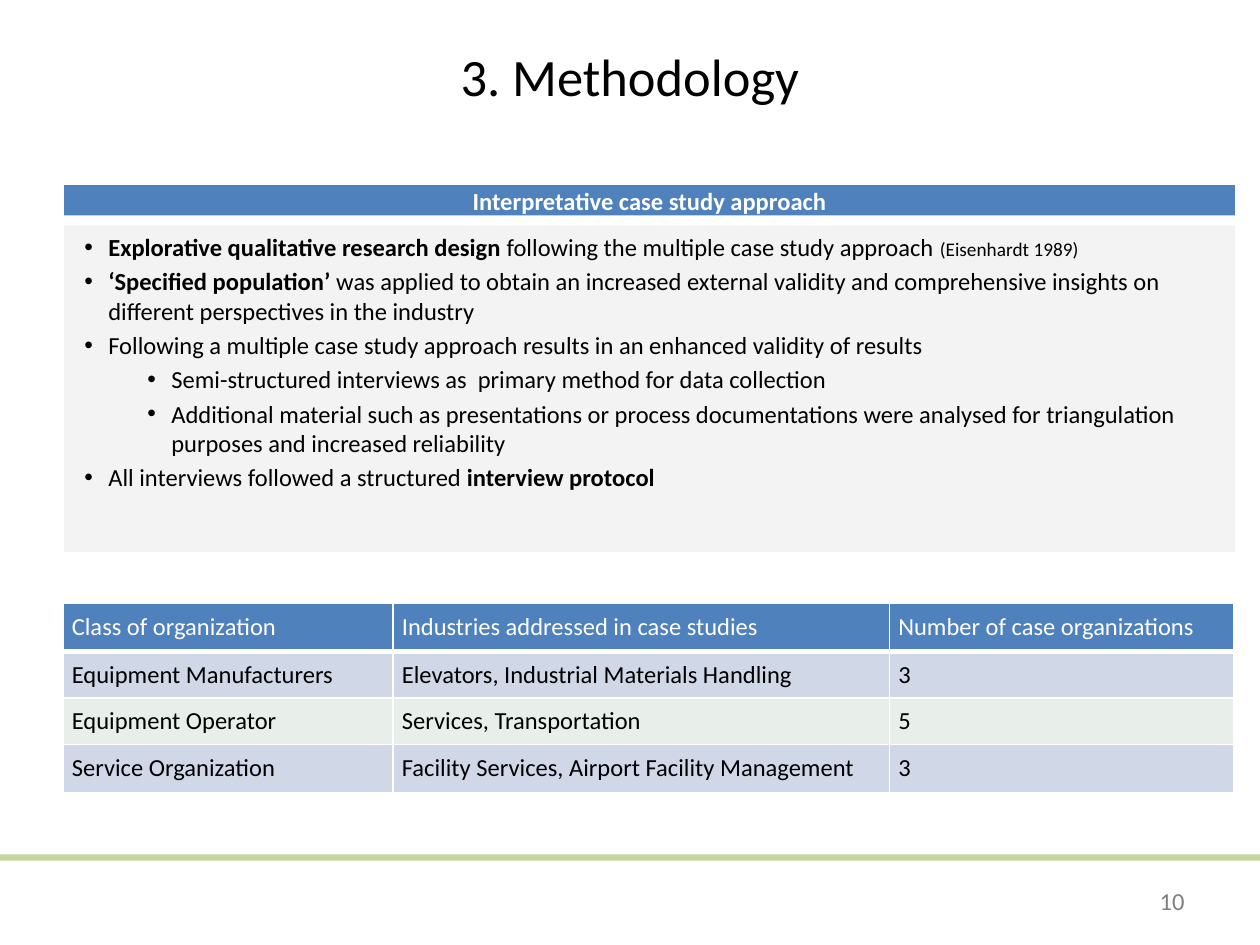
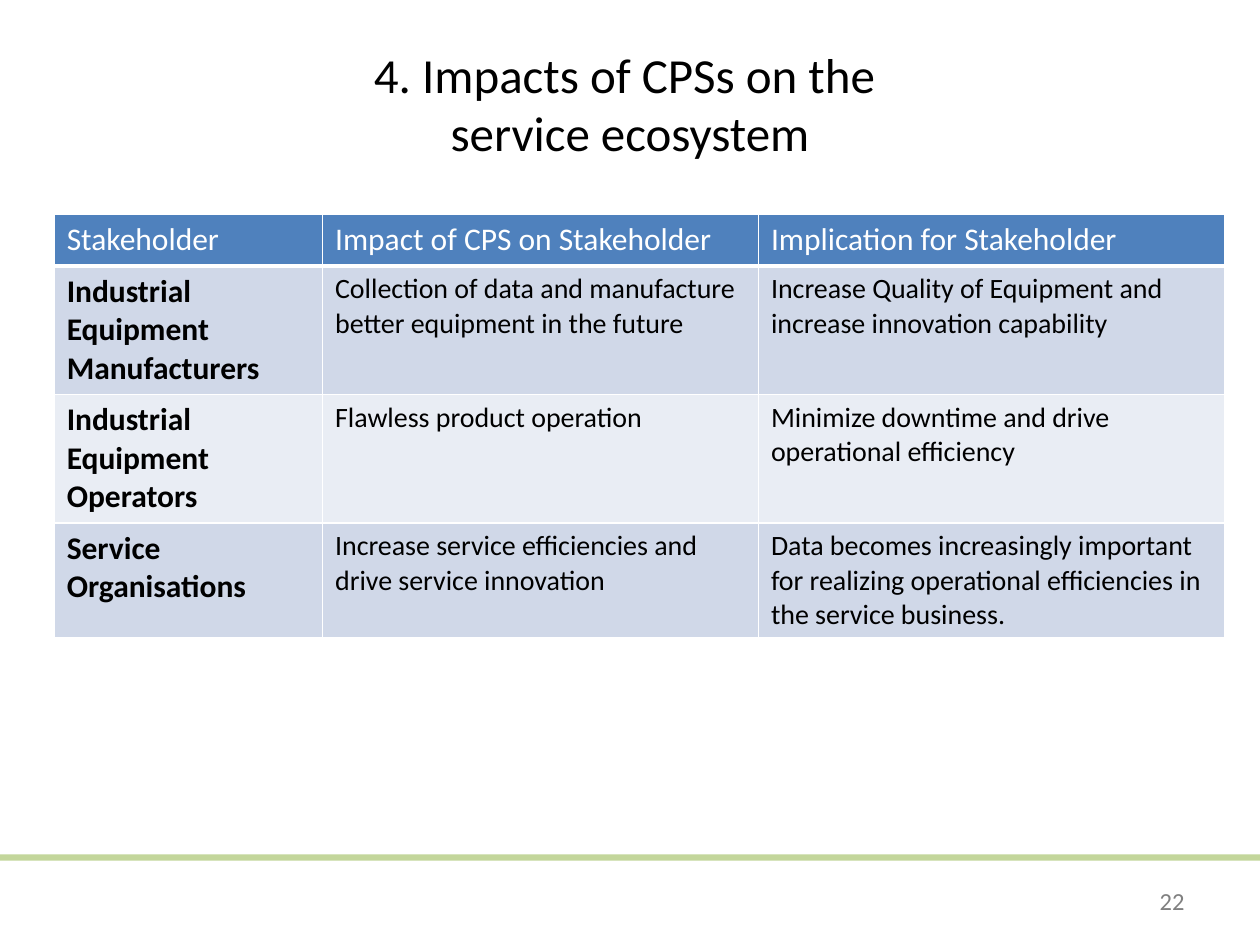
import pptx
import pptx.util
import pptx.dml.color
import pptx.enum.shapes
import pptx.enum.text
import pptx.oxml
import pptx.oxml.ns

RGB = pptx.dml.color.RGBColor
Pt = pptx.util.Pt
Align = pptx.enum.text.PP_ALIGN
Anchor = pptx.enum.text.MSO_ANCHOR
RECT = pptx.enum.shapes.MSO_SHAPE.RECTANGLE
NS = pptx.oxml.ns.nsdecls("a")

BLACK = RGB(0x00, 0x00, 0x00)
WHITE = RGB(0xFF, 0xFF, 0xFF)
BLUE = RGB(0x4F, 0x81, 0xBD)
GREEN = RGB(0xC3, 0xD6, 0x9B)
GREY = RGB(0x80, 0x80, 0x80)
PALE = RGB(0xF3, 0xF3, 0xF3)
ICE = RGB(0xD0, 0xD8, 0xE8)
MINT = RGB(0xE8, 0xEF, 0xEA)
MIST = RGB(0xE9, 0xED, 0xF4)

PX = 9144


def write(para, text, size, color=BLACK, bold=False):
    run = para.add_run()
    run.text = text
    look = {"name": "Calibri", "size": Pt(size), "bold": bold}
    for key, val in look.items():
        setattr(run.font, key, val)
    run.font.color.rgb = color


def place(shape, box, fill=None, frame=None):
    for key, val in zip(("left", "top", "width", "height"), box):
        setattr(shape, key, val * PX)
    if fill is not None:
        shape.fill.solid()
        shape.fill.fore_color.rgb = fill
        shape.line.fill.background()
    for key, val in (frame or {}).items():
        setattr(shape.text_frame, key, val)


deck = pptx.Presentation()
deck.slide_width = 1000 * PX
deck.slide_height = 750 * PX

pages = [
    {
        "layout": 1, "title": "3. Methodology", "size": 30, "number": "10",
        "left": 50, "top": 479, "cols": (262, 394, 273), "rows": (38, 37, 37, 38),
        "fills": (BLUE, ICE, MINT, ICE), "sizes": (14, 14, 14), "lead": False,
        "cell": {"vertical_anchor": Anchor.MIDDLE, "margin_left": 7 * PX,
                 "margin_right": 7 * PX, "margin_top": 0, "margin_bottom": 0},
        "para": {"space_after": Pt(4)},
        "data": (
            ("Class of organization", "Industries addressed in case studies",
             "Number of case organizations"),
            ("Equipment Manufacturers", "Elevators, Industrial Materials Handling", "3"),
            ("Equipment Operator", "Services, Transportation", "5"),
            ("Service Organization", "Facility Services, Airport Facility Management", "3"),
        ),
    },
    {
        "layout": 5, "title": "4. Impacts of CPSs on the \vservice ecosystem",
        "size": 28, "number": "22",
        "left": 43, "top": 170, "cols": (213, 346, 370), "rows": (41, 102, 102, 91),
        "fills": (BLUE, ICE, MIST, ICE), "sizes": (18, 16, 16), "lead": True,
        "cell": {}, "para": {},
        "data": (
            ("Stakeholder", "Impact of CPS on Stakeholder", "Implication for Stakeholder"),
            ("Industrial Equipment Manufacturers",
             "Collection of data and manufacture better equipment in the future",
             "Increase Quality of Equipment and increase innovation capability"),
            ("Industrial Equipment Operators", "Flawless product operation",
             "Minimize downtime and drive operational efficiency"),
            ("Service Organisations",
             "Increase service efficiencies and drive service innovation",
             "Data becomes increasingly important for realizing operational "
             "efficiencies in the service business."),
        ),
    },
]

for page in pages:
    slide = deck.slides.add_slide(deck.slide_layouts[page["layout"]])
    title = slide.shapes.title
    place(title, (50, 30, 900, 125), frame={
        "vertical_anchor": Anchor.TOP, "word_wrap": True,
        "auto_size": pptx.enum.text.MSO_AUTO_SIZE.NONE})
    head = title.text_frame.paragraphs[0]
    head.alignment = Align.CENTER
    for step, line in enumerate(page["title"].split("\v")):
        if step:
            head.add_line_break()
        write(head, line, page["size"])

    rows, cols = len(page["rows"]), len(page["cols"])
    box = (page["left"], page["top"], sum(page["cols"]), sum(page["rows"]))
    grid = slide.shapes.add_table(rows, cols, *(val * PX for val in box)).table
    for col, width in zip(grid.columns, page["cols"]):
        col.width = width * PX
    for r, line in enumerate(page["data"]):
        grid.rows[r].height = page["rows"][r] * PX
        for c, text in enumerate(line):
            cell = grid.cell(r, c)
            if r == 0:
                edge = cell._tc.get_or_add_tcPr()
                for side, wide in (("L", 1), ("R", 1), ("T", 1), ("B", 3)):
                    edge.append(pptx.oxml.parse_xml(
                        f'<a:ln{side} {NS} w="{Pt(wide)}"><a:solidFill>'
                        f'<a:srgbClr val="{WHITE}"/></a:solidFill></a:ln{side}>'))
            cell.fill.solid()
            cell.fill.fore_color.rgb = page["fills"][r]
            for key, val in page["cell"].items():
                setattr(cell, key, val)
            para = cell.text_frame.paragraphs[0]
            for key, val in page["para"].items():
                setattr(para, key, val)
            size = page["sizes"][c] if r else page["sizes"][0]
            write(para, text, size, BLACK if r else WHITE,
                  page["lead"] and r > 0 and c == 0)

    foot = slide.shapes.add_textbox(0, 0, PX, PX)
    place(foot, (717, 695, 233, 40), frame={
        "word_wrap": True, "vertical_anchor": Anchor.MIDDLE})
    para = foot.text_frame.paragraphs[0]
    para.alignment = Align.RIGHT
    write(para, page["number"], 14, GREY)

slide = deck.slides[0]
band = slide.shapes.add_shape(RECT, 0, 0, PX, PX)
band.shadow.inherit = False
place(band, (0, 678, 1000, 5), GREEN)
band.element.nvSpPr.cNvPr.set("id", "20")
deck.slide_master.shapes.element.insert(2, band.element)

bar = slide.shapes.add_shape(RECT, 0, 0, PX, PX)
bar.shadow.inherit = False
place(bar, (51, 147, 929, 24), BLUE, {
    "margin_left": 4 * PX, "margin_right": 4 * PX,
    "word_wrap": True, "vertical_anchor": Anchor.MIDDLE})
para = bar.text_frame.paragraphs[0]
para.alignment = Align.CENTER
write(para, "Interpretative case study approach", 14, WHITE, True)

points = [
    (0, [("Explorative qualitative research design ", 14, True),
         ("following the multiple case study approach ", 14, False),
         ("(Eisenhardt 1989)", 11, False)]),
    (0, [("‘Specified population’ ", 14, True),
         ("was applied to obtain an increased external validity and comprehensive "
          "insights on different perspectives in the industry", 14, False)]),
    (0, [("Following a multiple case study approach results in an enhanced "
          "validity of results", 14, False)]),
    (1, [("Semi-structured interviews as  primary method for data collection", 14, False)]),
    (1, [("Additional material such as presentations or process documentations were "
          "analysed for triangulation purposes and increased reliability", 14, False)]),
    (0, [("All interviews followed a structured ", 14, False),
         ("interview protocol", 14, True)]),
]
body = slide.placeholders[1]
place(body, (51, 179, 929, 259), PALE, {
    "margin_left": 16 * PX, "margin_right": 8 * PX, "word_wrap": True,
    "vertical_anchor": Anchor.TOP, "auto_size": pptx.enum.text.MSO_AUTO_SIZE.NONE})
for step, (level, parts) in enumerate(points):
    frame = body.text_frame
    para = frame.add_paragraph() if step else frame.paragraphs[0]
    para.level = level
    if step == 0:
        para.space_before = Pt(0)
    props = para._p.get_or_add_pPr()
    props.set("marL", str((19 + 50 * level) * PX))
    props.set("indent", str(-19 * PX))
    for mark in ('buFont {} typeface="Arial"', 'buChar {} char="•"'):
        props.append(pptx.oxml.parse_xml(f"<a:{mark.format(NS)}/>"))
    for text, size, bold in parts:
        write(para, text, size, BLACK, bold)

deck.save("out.pptx")
